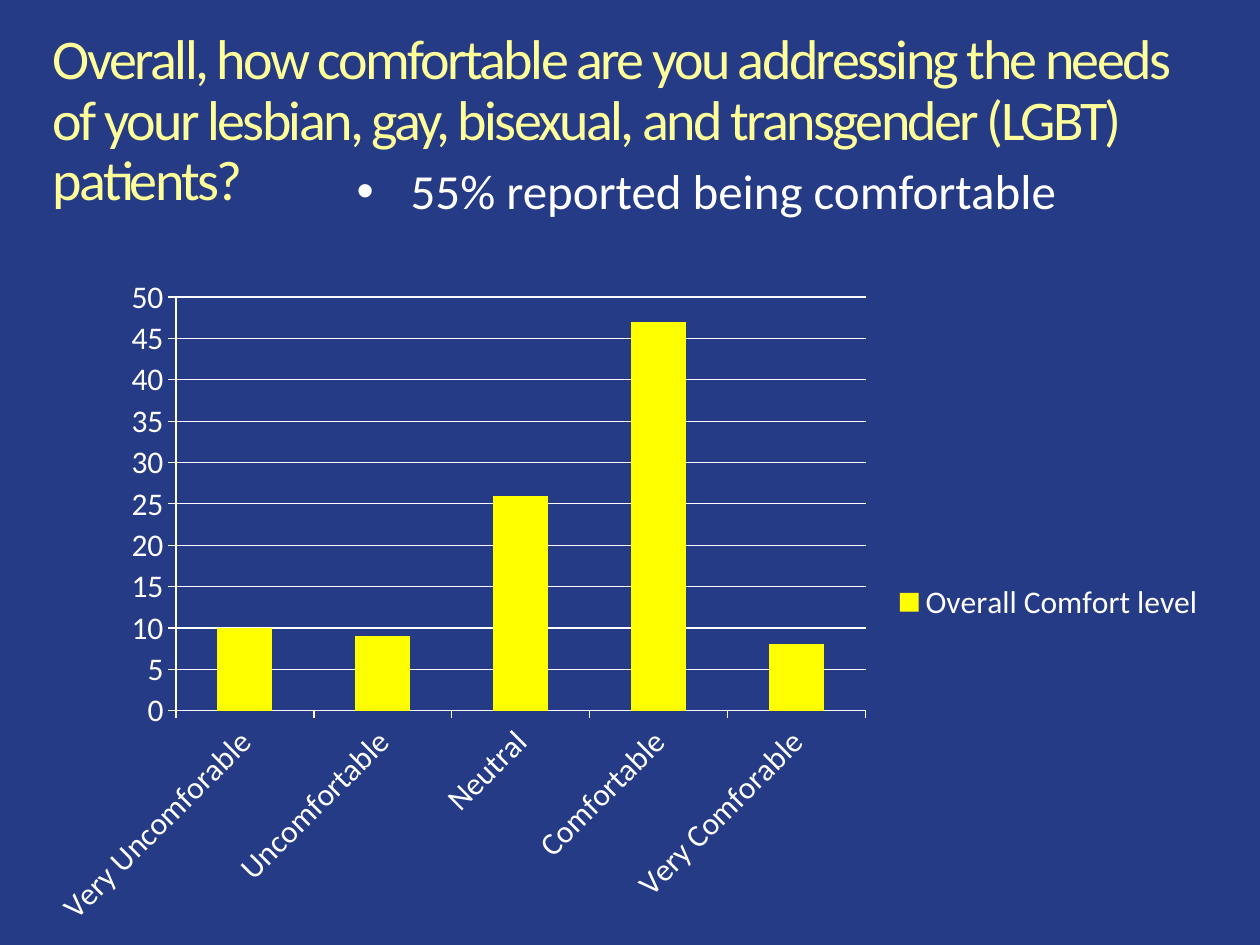
from pptx import Presentation
from pptx import util as u
from pptx.chart import data as cd
from pptx.dml import color
from pptx.enum import chart as ch, text

FONT = "Calibri"
COLORS = {
    "background": "263B86",
    "title": "FFFF99",
    "text": "FFFFFF",
    "bar": "FFFF00",
}
COMFORT = {
    "Very Uncomforable": 10,
    "Uncomfortable": 9,
    "Neutral": 26,
    "Comfortable": 47,
    "Very Comforable": 8,
}


def rgb(name):
    return color.RGBColor.from_string(COLORS[name])


def set_font(font, size, name):
    font.name = FONT
    font.size = u.Pt(size)
    font.color.rgb = rgb(name)


def fill_placeholder(sp, box, words, size, name):
    """Place a placeholder, write its single paragraph and return it."""
    sp.left, sp.top, sp.width, sp.height = [u.Inches(n) for n in box]
    tf = sp.text_frame
    tf.margin_left = tf.margin_top = tf.margin_right = tf.margin_bottom = 0
    tf.vertical_anchor = text.MSO_ANCHOR.TOP
    tf.auto_size = text.MSO_AUTO_SIZE.NONE
    tf.word_wrap = True
    tf.text = words
    p = tf.paragraphs[0]
    p.alignment = text.PP_ALIGN.LEFT
    p.line_spacing = 0.9
    p.space_before = u.Pt(0)
    set_font(p.font, size, name)
    return p


def style_line(line):
    line.color.rgb = rgb("text")
    line.width = u.Pt(0.75)


def add_comfort_chart(s, box):
    data = cd.CategoryChartData()
    data.categories = list(COMFORT)
    data.add_series("Overall Comfort level", list(COMFORT.values()))
    chart = s.shapes.add_chart(
        ch.XL_CHART_TYPE.COLUMN_CLUSTERED, *[u.Inches(n) for n in box], data
    ).chart
    chart.has_title = False
    set_font(chart.font, 18, "text")

    # Bars
    plot = chart.plots[0]
    plot.gap_width = 150
    plot.vary_by_categories = False
    fill = plot.series[0].format.fill
    fill.solid()
    fill.fore_color.rgb = rgb("bar")

    # Axes and gridlines
    for axis in (chart.category_axis, chart.value_axis):
        axis.major_tick_mark = ch.XL_TICK_MARK.OUTSIDE
        axis.minor_tick_mark = ch.XL_TICK_MARK.NONE
        style_line(axis.format.line)
    chart.value_axis.has_major_gridlines = True
    style_line(chart.value_axis.major_gridlines.format.line)

    # Legend
    chart.has_legend = True
    chart.legend.position = ch.XL_LEGEND_POSITION.RIGHT
    chart.legend.include_in_layout = False
    set_font(chart.legend.font, 18, "text")


def main():
    prs = Presentation()
    prs.slide_width, prs.slide_height = u.Inches(10), u.Inches(7.5)
    s = prs.slides.add_slide(prs.slide_layouts[1])
    s.background.fill.solid()
    s.background.fill.fore_color.rgb = rgb("background")

    # Title with tightened letter spacing
    p = fill_placeholder(
        s.shapes.title, (0.42, 0.25, 9.17, 0.73),
        "Overall, how comfortable are you addressing the needs of your "
        "lesbian, gay, bisexual, and transgender (LGBT) patients?",
        32, "title")
    p.runs[0]._r.get_or_add_rPr().set("spc", "-150")

    # Key finding, with the hanging indent of the bullet
    p = fill_placeholder(
        s.placeholders[1], (2.83, 1.33, 9.17, 0.43),
        "55% reported being comfortable", 28, "text")
    indent = u.Inches(0.43)
    pPr = p._p.get_or_add_pPr()
    pPr.set("marL", str(indent))
    pPr.set("indent", str(-indent))

    add_comfort_chart(s, (0.25, 2.1, 9.42, 5.36))
    prs.save("out.pptx")


if __name__ == "__main__":
    main()
